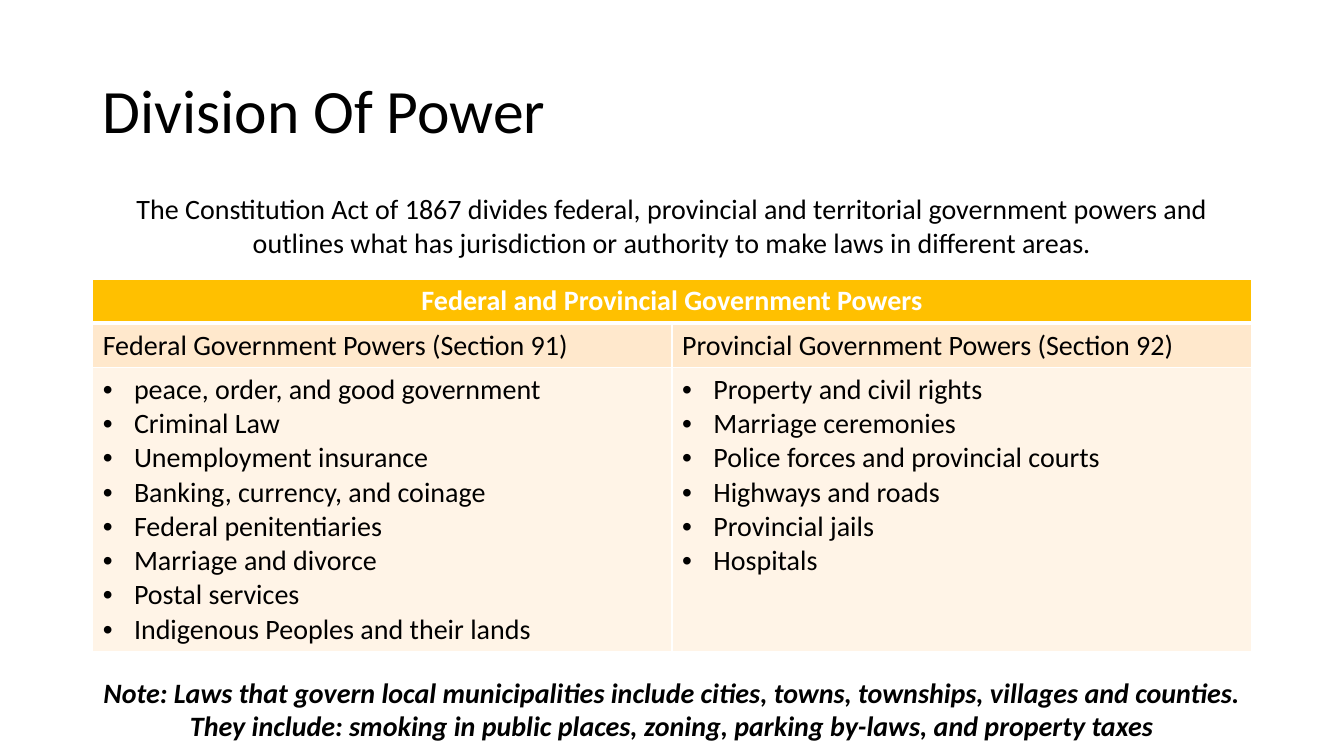
from lxml.etree import SubElement as add_element
from pptx import Presentation
from pptx.dml.color import RGBColor
from pptx.enum.text import MSO_ANCHOR as Anchor, PP_ALIGN as Align
from pptx.oxml import parse_xml
from pptx.oxml.ns import nsdecls, qn
from pptx.util import Inches, Pt

BLACK = RGBColor(0x00, 0x00, 0x00)
WHITE = RGBColor(0xFF, 0xFF, 0xFF)
GOLD = RGBColor(0xFF, 0xC0, 0x00)
PEACH = RGBColor(0xFF, 0xE8, 0xCC)
CREAM = RGBColor(0xFF, 0xF4, 0xE7)

INTRO = ("The Constitution Act of 1867 divides federal, provincial and territorial "
         "government powers and outlines what has jurisdiction or authority to make "
         "laws in different areas.")
NOTE = ("Note: Laws that govern local municipalities include cities, towns, townships, "
        "villages and counties. They include: smoking in public places, zoning, "
        "parking by-laws, and property taxes")
TABLE_TITLE = "Federal and Provincial Government Powers"
POWERS = {
    "Federal Government Powers (Section 91)": [
        "peace, order, and good government", "Criminal Law", "Unemployment insurance",
        "Banking, currency, and coinage", "Federal penitentiaries",
        "Marriage and divorce", "Postal services", "Indigenous Peoples and their lands"],
    "Provincial Government Powers (Section 92)": [
        "Property and civil rights", "Marriage ceremonies",
        "Police forces and provincial courts", "Highways and roads",
        "Provincial jails", "Hospitals"],
}


class PowerSlide:
    """Style and current slide, laid out on a grid of 29 columns and 150 rows."""

    COLUMNS, ROWS = 29, 150
    LEFT, SPAN = 2, 25
    BODY = {"name": "Calibri", "size": Pt(20), "bold": False, "italic": False}

    def __init__(self, presentation):
        self.slide = presentation.slides.add_slide(presentation.slide_layouts[6])
        self.column = presentation.slide_width / self.COLUMNS
        self.row = presentation.slide_height / self.ROWS

    def place(self, top, height):
        """Return the box of a full-width band."""
        return [round(length) for length in (
            self.LEFT * self.column, top * self.row,
            self.SPAN * self.column, height * self.row)]

    def fill_text(self, frame, lines, align=Align.LEFT, color=BLACK, bullet=False,
                  line_spacing=1.0, **font):
        for index, line in enumerate(lines):
            paragraph = frame.paragraphs[0] if index == 0 else frame.add_paragraph()
            paragraph.alignment = align
            paragraph.line_spacing = line_spacing
            run = paragraph.add_run()
            run.text = line
            for name, value in {**self.BODY, **font}.items():
                setattr(run.font, name, value)
            run.font.color.rgb = color
            if bullet:
                self.add_bullet(paragraph)

    def add_bullet(self, paragraph):
        properties = paragraph._p.get_or_add_pPr()
        indent = Inches(0.31)
        properties.set("marL", str(indent))
        properties.set("indent", str(-indent))
        add_element(properties, qn("a:buFont"), typeface="Arial")
        add_element(properties, qn("a:buChar"), char="•")

    def text(self, top, height, line, anchor=Anchor.TOP, **style):
        frame = self.slide.shapes.add_textbox(*self.place(top, height)).text_frame
        frame.word_wrap = True
        frame.vertical_anchor = anchor
        self.fill_text(frame, [line], **style)

    def cell(self, cell, lines, fill, top=1, bottom=1, **style):
        cell.fill.solid()
        cell.fill.fore_color.rgb = fill
        borders = {"lnL": 1, "lnR": 1, "lnT": top, "lnB": bottom}
        for index, (side, width) in enumerate(borders.items()):
            cell._tc.get_or_add_tcPr().insert(index, parse_xml(
                f'<a:{side} {nsdecls("a")} w="{Pt(width)}"><a:solidFill>'
                f'<a:srgbClr val="{WHITE}"/></a:solidFill></a:{side}>'))
        self.fill_text(cell.text_frame, lines, **style)

    def powers_table(self, top, row_heights, title, powers):
        table = self.slide.shapes.add_table(
            len(row_heights), len(powers), *self.place(top, sum(row_heights))).table
        for row, height in zip(table.rows, row_heights):
            row.height = round(height * self.row)
        # Heading across both columns
        table.cell(0, 0).merge(table.cell(0, len(powers) - 1))
        self.cell(table.cell(0, 0), [title], GOLD, bottom=3,
                  align=Align.CENTER, color=WHITE, bold=True)
        # One column for each level of government
        for index, (heading, items) in enumerate(powers.items()):
            self.cell(table.cell(1, index), [heading], PEACH, top=3)
            self.cell(table.cell(2, index), items, CREAM, bullet=True)


def main():
    presentation = Presentation()
    presentation.slide_width = Inches(13.33)
    presentation.slide_height = Inches(7.5)
    page = PowerSlide(presentation)

    # Title and introduction
    page.text(8, 29, "Division Of Power", anchor=Anchor.MIDDLE,
              size=Pt(44), line_spacing=0.9)
    page.text(37, 15.4, INTRO, align=Align.CENTER)

    # Table of powers
    page.powers_table(55.4, [8.75, 8.75, 56.3], TABLE_TITLE, POWERS)

    # Closing note
    page.text(133, 21.6, NOTE, align=Align.CENTER, bold=True, italic=True)

    presentation.save("out.pptx")


if __name__ == "__main__":
    main()
